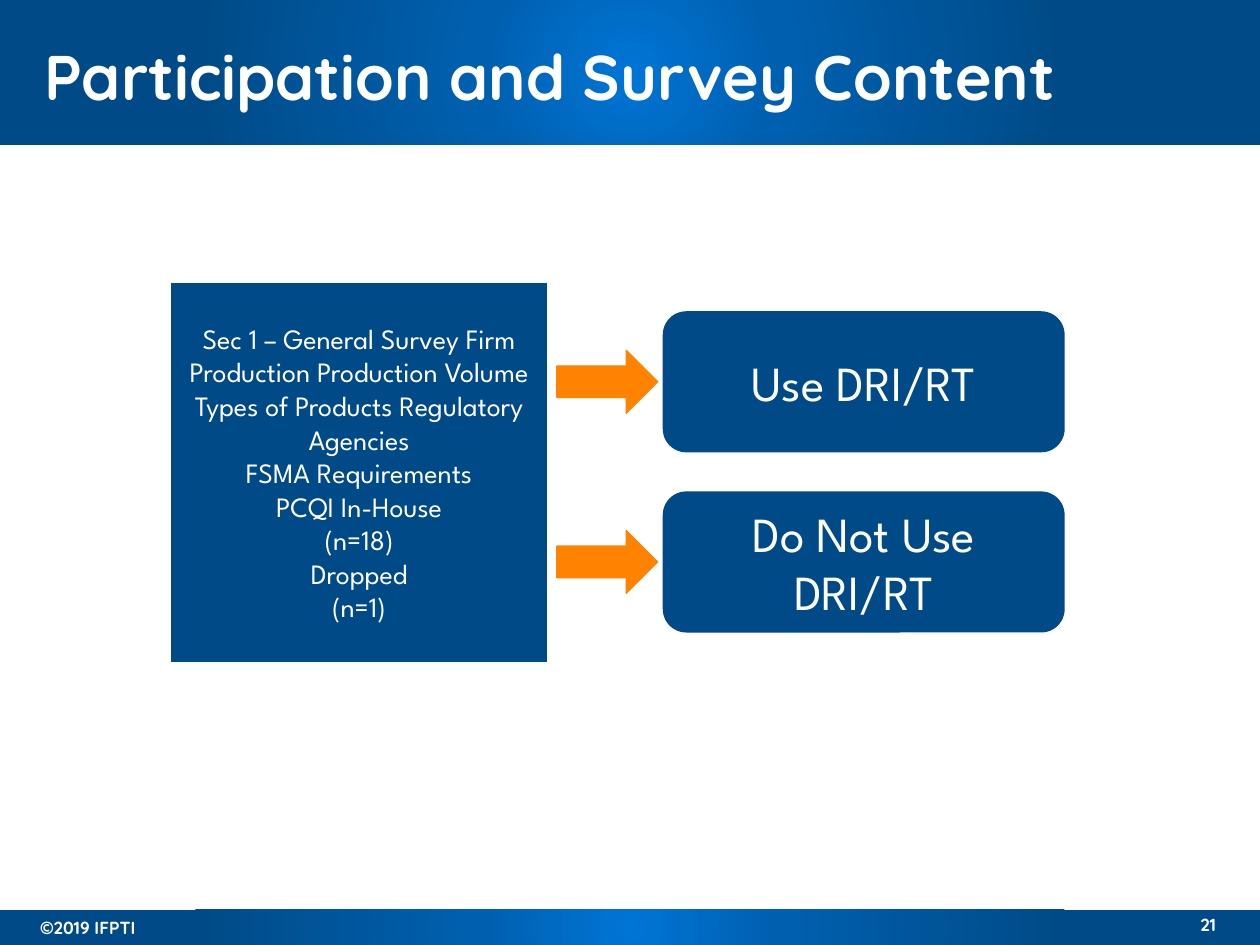
"""Build the survey participation slide with its section box and two branches."""
from lxml import etree
from pptx import Presentation
from pptx import util as u
from pptx.dml.color import RGBColor
from pptx.enum import shapes, text
from pptx.oxml.ns import qn

THEME = {
    "navy": "004B87", "orange": "FF8200", "white": "FFFFFF",
    "gradient": [(0, "0075D6"), (23, "0060B0"), (69, "004B87"), (97, "004B87")],
    "heading": "Quicksand", "body": "League Spartan",
    "title": 36, "branch": 28, "section": 16, "footer": 10,
}
TITLE = "Participation and Survey Content"
SECTION = [
    "Sec 1 – General Survey Firm Production Production Volume Types of Products Regulatory Agencies",
    "FSMA Requirements", "PCQI In-House", "(n=18)", "Dropped", "(n=1)",
]
BRANCHES = ["Use DRI/RT", "Do Not Use DRI/RT"]
BANDS = [(0, 0, 10, 1.15), (0, 7.22, 10, 0.28)]
FOOTERS = [
    ("©2019 IFPTI", (0.22, 7.23, 1.33, 0.27), text.PP_ALIGN.LEFT),
    ("21", (8.79, 7.2, 0.96, 0.27), text.PP_ALIGN.RIGHT),
]
SECTION_BOX = (1.36, 2.25, 2.98, 3)
BRANCH_LEFT, BRANCH_TOP, BRANCH_WIDTH, BRANCH_HEIGHT = 5.26, 2.47, 3.19, 1.12
BRANCH_STEP = 1.43
ARROW_LEFT, ARROW_WIDTH, ARROW_HEIGHT = 4.42, 0.8, 0.5


def inches(box):
    return [u.Inches(value) for value in box]


def write(shape, lines, size, font, align, bold=False):
    frame = shape.text_frame
    margins = {"margin_left": 0.1, "margin_right": 0.1, "margin_top": 0.05, "margin_bottom": 0.05}
    for name, value in margins.items():
        setattr(frame, name, u.Inches(value))
    frame.word_wrap = True
    frame.auto_size = text.MSO_AUTO_SIZE.NONE
    frame.vertical_anchor = text.MSO_ANCHOR.MIDDLE
    frame.text = "\n".join(lines)
    for paragraph in frame.paragraphs:
        paragraph.alignment = align
        for name, value in {"size": u.Pt(size), "name": font, "bold": bold}.items():
            setattr(paragraph.font, name, value)
        paragraph.font.color.rgb = RGBColor.from_string(THEME["white"])


def add_block(slide, kind, box, color, outlined=False):
    shape = slide.shapes.add_shape(kind, *inches(box))
    shape.shadow.inherit = False
    shape.fill.solid()
    shape.fill.fore_color.rgb = RGBColor.from_string(color)
    if outlined:
        shape.line.color.rgb = RGBColor.from_string(color)
        shape.line.width = u.Pt(0.75)
    else:
        shape.line.fill.background()
    return shape


def add_band(slide, box):
    shape = add_block(slide, shapes.MSO_SHAPE.RECTANGLE, box, THEME["navy"])
    solid = shape.element.spPr.find(qn("a:solidFill"))
    gradient = etree.Element(qn("a:gradFill"), rotWithShape="1")
    stops = etree.SubElement(gradient, qn("a:gsLst"))
    for position, color in THEME["gradient"]:
        stop = etree.SubElement(stops, qn("a:gs"), pos=str(position * 1000))
        etree.SubElement(stop, qn("a:srgbClr"), val=color)
    circle = etree.SubElement(gradient, qn("a:path"), path="circle")
    etree.SubElement(circle, qn("a:fillToRect"), l="50000", t="50000", r="50000", b="50000")
    solid.getparent().replace(solid, gradient)
    return shape


def main():
    presentation = Presentation()
    presentation.slide_width, presentation.slide_height = inches((10, 7.5))
    slide = presentation.slides.add_slide(presentation.slide_layouts[5])
    center = text.PP_ALIGN.CENTER

    title = slide.shapes.title
    title.left, title.top, title.width, title.height = inches((0.25, 0.13, 9.32, 0.94))
    write(title, [TITLE], THEME["title"], THEME["heading"], text.PP_ALIGN.LEFT, True)
    for box in BANDS:
        title.element.addprevious(add_band(slide, box).element)
    for label, box, align in FOOTERS:
        footer = slide.shapes.add_textbox(*inches(box))
        write(footer, [label], THEME["footer"], THEME["heading"], align, True)

    section = add_block(slide, shapes.MSO_SHAPE.RECTANGLE, SECTION_BOX, THEME["navy"], True)
    write(section, SECTION, THEME["section"], THEME["body"], center)
    for index, label in enumerate(BRANCHES):
        top = BRANCH_TOP + index * BRANCH_STEP
        branch = add_block(slide, shapes.MSO_SHAPE.ROUNDED_RECTANGLE,
                           (BRANCH_LEFT, top, BRANCH_WIDTH, BRANCH_HEIGHT), THEME["navy"])
        write(branch, [label], THEME["branch"], THEME["body"], center)
        arrow_top = top + (BRANCH_HEIGHT - ARROW_HEIGHT) / 2
        add_block(slide, shapes.MSO_SHAPE.RIGHT_ARROW,
                  (ARROW_LEFT, arrow_top, ARROW_WIDTH, ARROW_HEIGHT), THEME["orange"], True)

    presentation.save("out.pptx")


if __name__ == "__main__":
    main()
